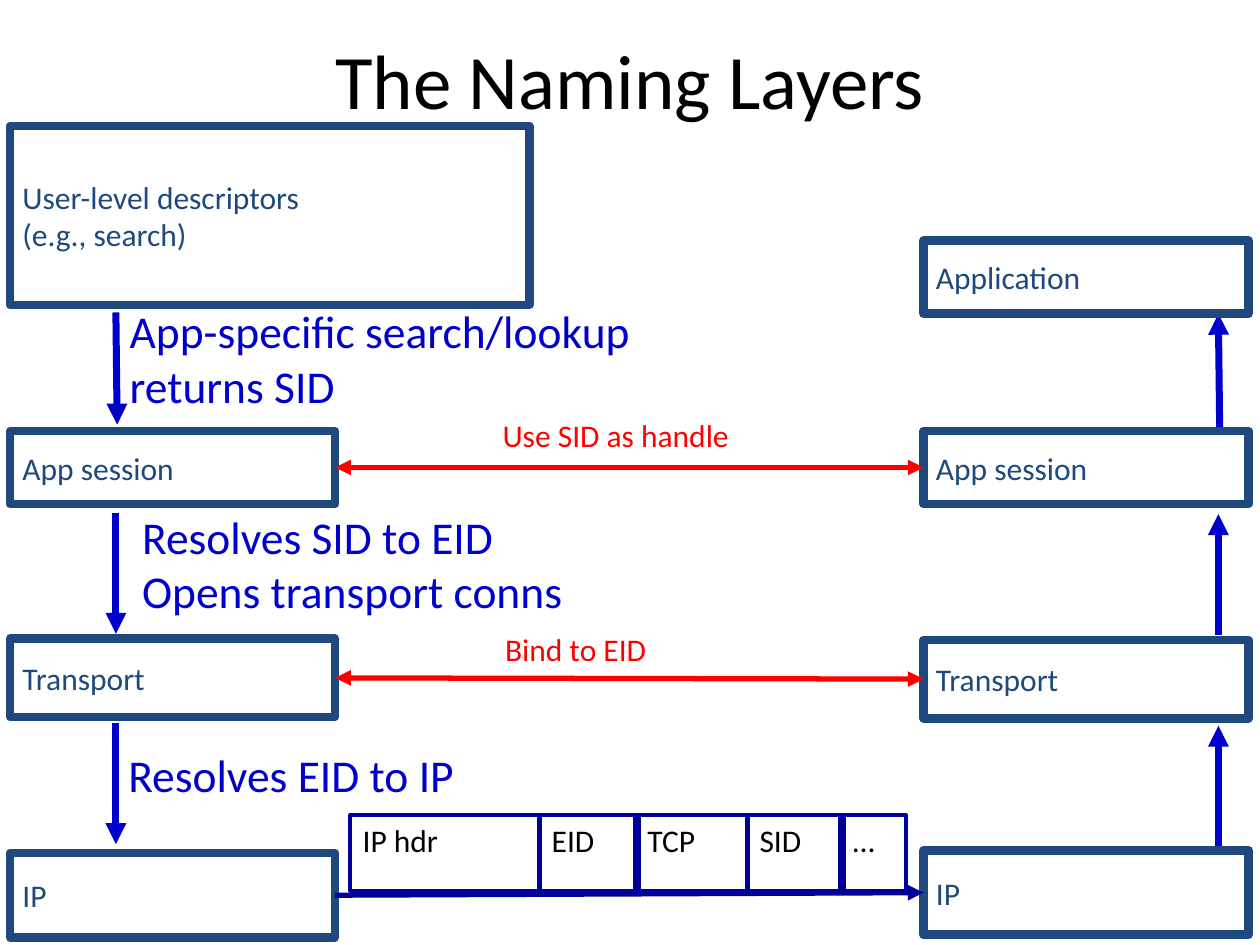
"""Build the slide showing the naming layers between two hosts."""
from dataclasses import dataclass
from pptx import Presentation
from pptx.dml.color import RGBColor
from pptx.enum.shapes import MSO_CONNECTOR, MSO_SHAPE
from pptx.enum.text import MSO_ANCHOR, PP_ALIGN
from pptx.oxml.ns import qn
from pptx.util import Inches, Pt
from lxml import etree

RECTANGLE = MSO_SHAPE.RECTANGLE
STRAIGHT = MSO_CONNECTOR.STRAIGHT
TOP, MIDDLE = MSO_ANCHOR.TOP, MSO_ANCHOR.MIDDLE
LEFT, CENTER = PP_ALIGN.LEFT, PP_ALIGN.CENTER
LEFT_SIDE, RIGHT_SIDE = 1, 3


@dataclass(frozen=True)
class Theme:
    font: str = "Calibri"
    black: RGBColor = RGBColor(0x00, 0x00, 0x00)
    layer: RGBColor = RGBColor(0x1F, 0x49, 0x7D)
    step: RGBColor = RGBColor(0x00, 0x00, 0xCC)
    peer: RGBColor = RGBColor(0xFF, 0x00, 0x00)
    packet: RGBColor = RGBColor(0x00, 0x00, 0x99)
    title_size: int = 44
    step_size: int = 26
    body_size: int = 18


theme = Theme()


def write(box, text, *, size=theme.body_size, color=theme.black, anchor=TOP, align=LEFT):
    frame = box.text_frame
    frame.word_wrap = True
    frame.vertical_anchor = anchor
    frame.text = text
    for para in frame.paragraphs:
        para.alignment = align
        for span in para.runs:
            span.font.name = theme.font
            span.font.size = Pt(size)
            span.font.color.rgb = color


def style_arrow(arrow, color, width, ends):
    arrow.line.color.rgb = color
    arrow.line.width = Pt(width)
    properties = arrow._element.spPr
    for end in ends:
        etree.SubElement(properties.find(qn("a:ln")), qn(f"a:{end}"), type="triangle")
    etree.SubElement(properties, qn("a:effectLst"))


deck = Presentation()
deck.slide_width, deck.slide_height = Inches(10), Inches(7.5)
page = deck.slides.add_slide(deck.slide_layouts[5])

title = page.shapes.title
title.left, title.top = Inches(0.75), Inches(0)
title.width, title.height = Inches(8.5), Inches(1.25)
write(title, "The Naming Layers", size=theme.title_size, anchor=MIDDLE, align=CENTER)

step_arrows = [
    (0.92, 2.48, 0.93, 3.37),
    (0.92, 4.07, 0.92, 5.03),
    (0.92, 5.74, 0.92, 6.7),
    (9.68, 3.39, 9.67, 2.49),
    (9.67, 5.04, 9.67, 4.08),
    (9.67, 6.72, 9.67, 5.76),
]
for ends in step_arrows:
    arrow = page.shapes.add_connector(STRAIGHT, *map(Inches, ends))
    style_arrow(arrow, theme.step, 4, ["tailEnd"])

host_left, peer_left, layer_width = 0.08, 7.33, 2.58
layers = [
    ("User-level descriptors\v(e.g., search)", host_left, 1, 4.12, 1.42),
    ("App session", host_left, 3.42, layer_width, 0.58),
    ("Transport", host_left, 5.07, layer_width, 0.62),
    ("IP", host_left, 6.77, layer_width, 0.67),
    ("Application", peer_left, 1.91, layer_width, 0.58),
    ("App session", peer_left, 3.42, layer_width, 0.58),
    ("Transport", peer_left, 5.08, layer_width, 0.62),
    ("IP", peer_left, 6.75, layer_width, 0.67),
]
layer_boxes = {}
for text, *place in layers:
    box = page.shapes.add_shape(RECTANGLE, *map(Inches, place))
    box.shadow.inherit = False
    box.fill.background()
    box.line.color.rgb = theme.layer
    box.line.width = Pt(5)
    write(box, text, color=theme.layer, anchor=MIDDLE)
    layer_boxes[text, place[0]] = box

peer_links = [
    ("App session", theme.peer, ["headEnd", "tailEnd"]),
    ("Transport", theme.peer, ["headEnd", "tailEnd"]),
    ("IP", theme.packet, ["tailEnd"]),
]
for layer, color, heads in peer_links:
    link = page.shapes.add_connector(STRAIGHT, 0, 0, 0, 0)
    link.begin_connect(layer_boxes[layer, host_left], RIGHT_SIDE)
    link.end_connect(layer_boxes[layer, peer_left], LEFT_SIDE)
    style_arrow(link, color, 3, heads)

labels = [
    ("App-specific search/lookup\nreturns SID", theme.step, theme.step_size, 0.93, 2.36, 4.75, 0.97),
    ("Resolves SID to EID\vOpens transport conns", theme.step, theme.step_size, 1.03, 3.99, 3.9, 0.97),
    ("Resolves EID to IP", theme.step, theme.step_size, 0.92, 5.88, 3.9, 0.53),
    ("Use SID as handle", theme.peer, theme.body_size, 3.89, 3.25, 3.24, 0.57),
    ("Bind to EID", theme.peer, theme.body_size, 3.91, 4.95, 2.11, 0.57),
]
for text, color, size, *place in labels:
    label = page.shapes.add_textbox(*map(Inches, place))
    write(label, text, color=color, size=size)

packet_fields = [
    ("IP hdr", 2.78, 1.51),
    ("EID", 4.28, 0.79),
    ("TCP", 5.04, 0.9),
    ("SID", 5.93, 0.77),
    ("…", 6.67, 0.52),
]
for text, left, width in packet_fields:
    field = page.shapes.add_shape(RECTANGLE, Inches(left), Inches(6.47), Inches(width), Inches(0.6))
    field.shadow.inherit = False
    field.fill.background()
    field.line.color.rgb = theme.packet
    field.line.width = Pt(2.25)
    write(field, text)

deck.save("out.pptx")
